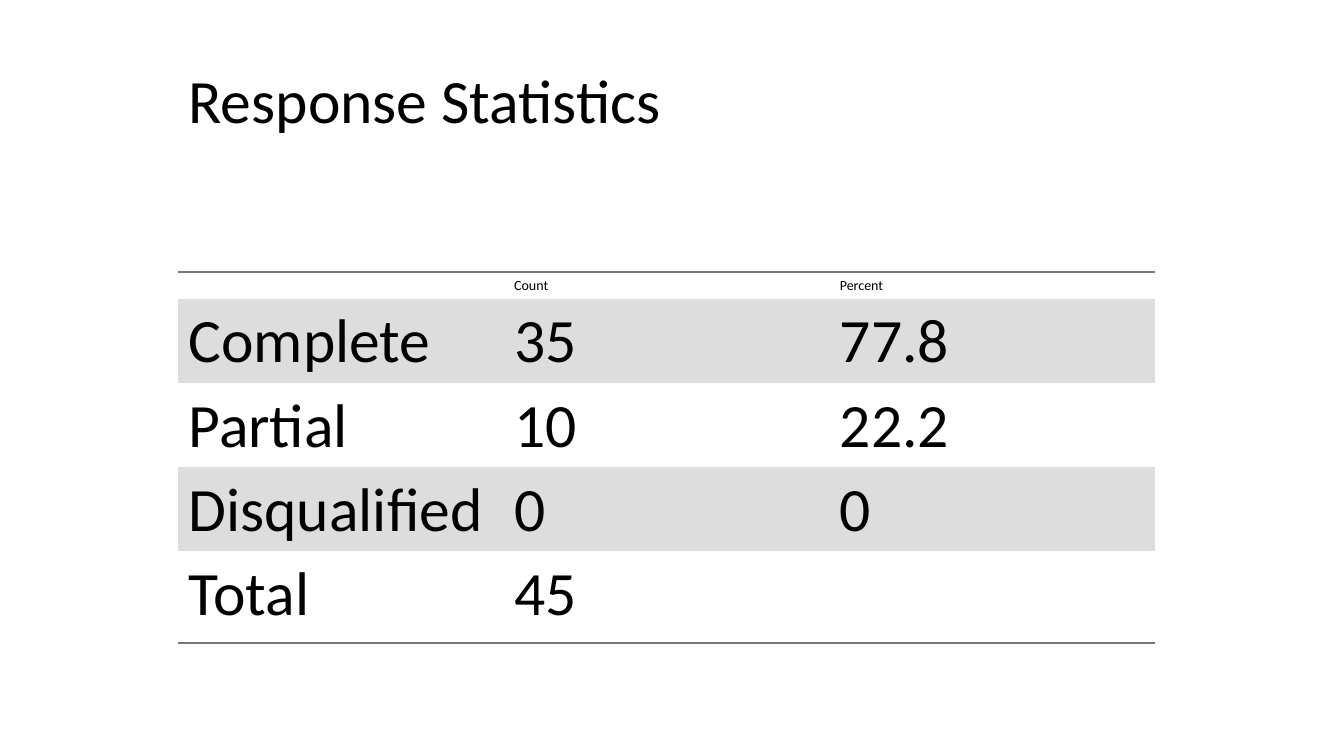
"""Build the response statistics slide."""
from dataclasses import dataclass

from lxml.etree import SubElement
from pptx import Presentation
from pptx.dml.color import RGBColor as Rgb
from pptx.enum.text import MSO_ANCHOR as Anchor, MSO_AUTO_SIZE as AutoSize, PP_ALIGN as Align
from pptx.oxml import parse_xml
from pptx.oxml.ns import nsdecls, qn
from pptx.slide import Slide
from pptx.table import Table, _Cell as Cell
from pptx.text.text import TextFrame
from pptx.util import Inches, Pt


@dataclass(frozen=True)
class Theme:
    font: str = "Calibri"
    ink: str = "000000"
    plain: str = "FFFFFF"
    band: str = "DDDDDD"
    rule: str = "777777"
    rule_width: int = 2
    large: int = 44
    small: int = 10


@dataclass(frozen=True)
class StatRow:
    values: tuple[str, str, str]
    height: float = 0.83
    size: int = Theme.large
    fill: str = Theme.plain
    rule_tag: str = ""


THEME = Theme()
LEFT, WIDTH = 1.77, 9.69
NO_GRID_STYLE = "{2D5ABB26-0587-4C30-8999-92F81FD0307C}"
ROWS = (
    StatRow(("", "Count", "Percent"), height=0.27, size=THEME.small, rule_tag="lnT"),
    StatRow(("Complete", "35", "77.8"), fill=THEME.band),
    StatRow(("Partial", "10", "22.2")),
    StatRow(("Disqualified", "0", "0"), fill=THEME.band),
    StatRow(("Total", "45", ""), height=0.91, rule_tag="lnB"),
)


def write_text(frame: TextFrame, text: str, size: int) -> None:
    para = frame.paragraphs[0]
    para.text = text
    para.alignment = Align.LEFT
    for span in para.runs:
        span.font.name = THEME.font
        span.font.size = Pt(size)
        span.font.bold = False
        span.font.color.rgb = Rgb.from_string(THEME.ink)
    if not text:
        SubElement(para._p, qn("a:endParaRPr"), sz=str(size * 100))


def add_rule(cell: Cell, tag: str) -> None:
    line = parse_xml(
        f'<a:{tag} {nsdecls("a")} w="{Pt(THEME.rule_width)}"><a:solidFill>'
        f'<a:srgbClr val="{THEME.rule}"/></a:solidFill></a:{tag}>'
    )
    cell._tc.get_or_add_tcPr().insert(0, line)


def fill_row(table: Table, index: int, row: StatRow) -> None:
    table.rows[index].height = Inches(row.height)
    for column, value in enumerate(row.values):
        cell = table.cell(index, column)
        cell.fill.solid()
        cell.fill.fore_color.rgb = Rgb.from_string(row.fill)
        write_text(cell.text_frame, value, row.size)
        if row.rule_tag:
            add_rule(cell, row.rule_tag)


def add_title(slide: Slide) -> None:
    title = slide.shapes.title
    title.left, title.top = Inches(LEFT), Inches(0.56)
    title.width, title.height = Inches(WIDTH), Inches(0.84)
    frame = title.text_frame
    frame.word_wrap = True
    frame.auto_size = AutoSize.SHAPE_TO_FIT_TEXT
    frame.vertical_anchor = Anchor.TOP
    write_text(frame, "Response Statistics", THEME.large)


def add_statistics(slide: Slide) -> None:
    height = sum(row.height for row in ROWS)
    table = slide.shapes.add_table(
        len(ROWS), 3, Inches(LEFT), Inches(2.7), Inches(WIDTH), Inches(height)
    ).table
    table.first_row = table.horz_banding = False
    table._tbl.tblPr.find(qn("a:tableStyleId")).text = NO_GRID_STYLE
    for index, row in enumerate(ROWS):
        fill_row(table, index, row)
    last = len(ROWS) - 1
    table.cell(last, 1).merge(table.cell(last, 2))


def main() -> None:
    deck = Presentation()
    deck.slide_width, deck.slide_height = Inches(13.33), Inches(7.5)
    page = deck.slides.add_slide(deck.slide_layouts[5])
    add_title(page)
    add_statistics(page)
    deck.save("out.pptx")


if __name__ == "__main__":
    main()
